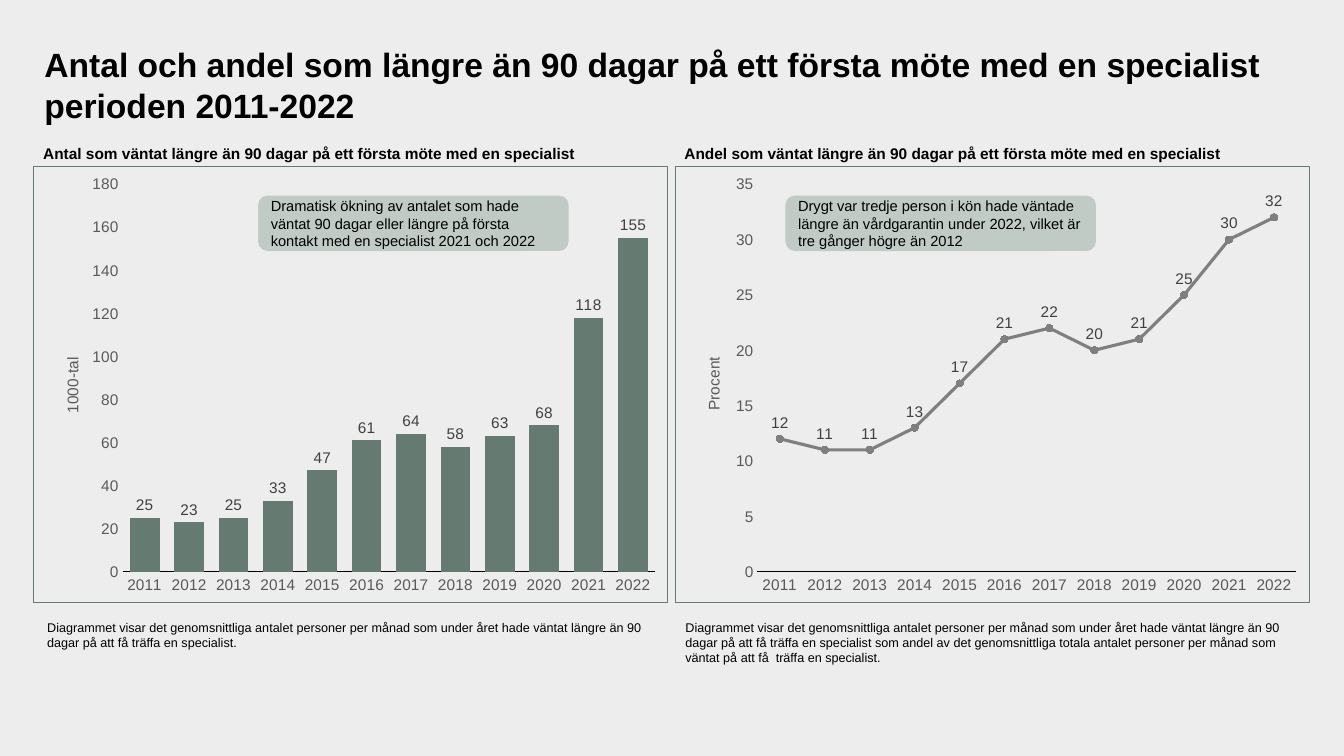
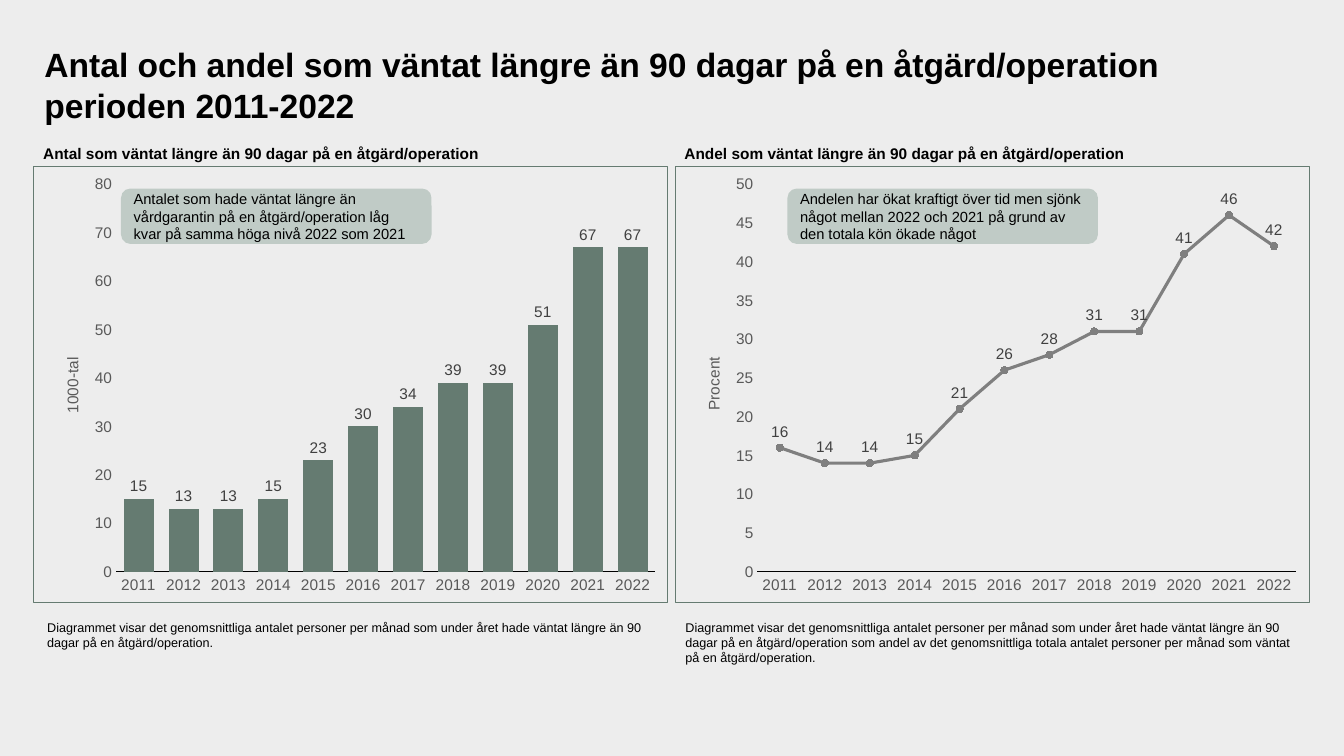
from dataclasses import dataclass

from lxml import etree
from pptx import Presentation
from pptx.chart.data import CategoryChartData
from pptx.dml.color import RGBColor
from pptx.enum import chart as charts, shapes, text
from pptx.oxml import parse_xml
from pptx.oxml.ns import nsdecls, qn
from pptx.util import Inches, Pt

FONT = "Arial"
BLACK = RGBColor(0x00, 0x00, 0x00)
BACKGROUND = RGBColor(0xED, 0xED, 0xED)
GREEN = RGBColor(0x65, 0x7B, 0x71)
PALE_GREEN = RGBColor(0xC0, 0xCB, 0xC6)
LINE_GREY = RGBColor(0x7F, 0x7F, 0x7F)
AXIS_GREY = RGBColor(0x59, 0x59, 0x59)
LABEL_GREY = RGBColor(0x40, 0x40, 0x40)

YEARS = [str(year) for year in range(2011, 2023)]
PANEL_WIDTH = 6.3
CHART_TOP, CHART_HEIGHT = 1.65, 4.33
HEADING_TOP, NOTE_TOP = 1.38, 6.1
CALLOUT_SIZE = 3.08, 0.55
CALLOUT_SHAPE = 0.2, 0.5, 0.17  # tip x, tip y, corner radius


@dataclass
class Panel:
    heading: str
    values: list
    axis_max: int
    axis_step: int
    callout: str
    callout_at: tuple  # offset from the chart's top left corner
    note: str


def set_font(font, size, color=BLACK, bold=False):
    font.name = FONT
    font.size = Pt(size)
    font.bold = bold
    font.color.rgb = color


def write(frame, words, size, bold=False, space_after=0):
    frame.word_wrap = True
    frame.text = words
    para = frame.paragraphs[0]
    para.alignment = text.PP_ALIGN.LEFT
    para.space_after = Pt(space_after)
    set_font(para.runs[0].font, size, bold=bold)


def add_text(page, left, top, height, words, size, **style):
    box = page.shapes.add_textbox(
        Inches(left), Inches(top), Inches(PANEL_WIDTH), Inches(height))
    write(box.text_frame, words, size, **style)


def add_title(page, words):
    title = page.shapes.title
    title.left, title.top = Inches(0.34), Inches(0.39)
    title.width, title.height = Inches(12.65), Inches(0.91)
    title.text_frame.auto_size = text.MSO_AUTO_SIZE.NONE
    title.text_frame.vertical_anchor = text.MSO_ANCHOR.TOP
    write(title.text_frame, words, 24, bold=True)


def set_layout(parent, before, **fractions):
    """Place a chart part by fractions of the chart's size."""
    for old in parent.findall(qn("c:layout")):
        parent.remove(old)
    layout = etree.Element(qn("c:layout"))
    manual = etree.SubElement(layout, qn("c:manualLayout"))
    if "w" in fractions:
        etree.SubElement(manual, qn("c:layoutTarget")).set("val", "inner")
    for name in ("x", "y"):
        etree.SubElement(manual, qn(f"c:{name}Mode")).set("val", "edge")
    for name, value in fractions.items():
        etree.SubElement(manual, qn(f"c:{name}")).set("val", str(value))
    parent.insert(before, layout)


def add_border(chart):
    border = parse_xml(
        f'<c:spPr {nsdecls("c", "a")}><a:noFill/><a:ln w="{Pt(0.75)}">'
        f'<a:solidFill><a:srgbClr val="{GREEN}"/></a:solidFill></a:ln></c:spPr>')
    chart.element.find(qn("c:chart")).addnext(border)


def style_axes(chart, unit, axis_max, axis_step):
    for axis in (chart.category_axis, chart.value_axis):
        axis.has_major_gridlines = False
        axis.major_tick_mark = charts.XL_TICK_MARK.NONE
        axis.minor_tick_mark = charts.XL_TICK_MARK.NONE
        set_font(axis.tick_labels.font, 11, AXIS_GREY)
    line = chart.category_axis.format.line
    line.color.rgb = BLACK
    line.width = Pt(0.75)

    axis = chart.value_axis
    axis.format.line.fill.background()
    axis.minimum_scale, axis.maximum_scale = 0, axis_max
    axis.major_unit = axis_step
    axis.tick_labels.number_format = "0"
    axis.tick_labels.number_format_is_linked = False
    frame = axis.axis_title.text_frame
    frame.text = unit
    set_font(frame.paragraphs[0].runs[0].font, 11, AXIS_GREY)
    body = axis.axis_title._element.find(".//" + qn("a:bodyPr"))
    body.set("rot", "-5400000")
    body.set("vert", "horz")
    set_layout(axis.axis_title._element, 1, x=0.04, y=0.43)


def add_chart(page, left, kind, unit, panel):
    data = CategoryChartData(number_format="0")
    data.categories = YEARS
    data.add_series("Series 1", panel.values)
    chart = page.shapes.add_chart(
        kind, Inches(left), Inches(CHART_TOP), Inches(PANEL_WIDTH),
        Inches(CHART_HEIGHT), data).chart
    chart.has_title = False
    chart.has_legend = False
    set_font(chart.font, 11)
    add_border(chart)
    style_axes(chart, unit, panel.axis_max, panel.axis_step)
    plot_left = 0.14 if panel.axis_max >= 100 else 0.13
    set_layout(chart.element.find(".//" + qn("c:plotArea")), 0,
               x=plot_left, y=0.04, w=round(0.98 - plot_left, 2), h=0.89)

    plot = chart.plots[0]
    plot.vary_by_categories = False
    series = plot.series[0]
    labels = series.data_labels
    labels.show_value = True
    set_font(labels.font, 11, LABEL_GREY)
    if kind == charts.XL_CHART_TYPE.COLUMN_CLUSTERED:
        plot.gap_width, plot.overlap = 50, -27
        series.format.fill.solid()
        series.format.fill.fore_color.rgb = GREEN
        labels.position = charts.XL_LABEL_POSITION.OUTSIDE_END
    else:
        series.smooth = False
        series.format.line.color.rgb = LINE_GREY
        series.format.line.width = Pt(2.25)
        marker = series.marker
        marker.style, marker.size = charts.XL_MARKER_STYLE.CIRCLE, 5
        marker.format.fill.solid()
        marker.format.fill.fore_color.rgb = LINE_GREY
        marker.format.line.color.rgb = LINE_GREY
        labels.position = charts.XL_LABEL_POSITION.ABOVE


def add_callout(page, left, top, words):
    width, height = CALLOUT_SIZE
    callout = page.shapes.add_shape(
        shapes.MSO_SHAPE.ROUNDED_RECTANGULAR_CALLOUT,
        Inches(left), Inches(top), Inches(width), Inches(height))
    for index, value in enumerate(CALLOUT_SHAPE):
        callout.adjustments[index] = value
    callout.shadow.inherit = False
    callout.fill.solid()
    callout.fill.fore_color.rgb = PALE_GREEN
    callout.line.fill.background()
    frame = callout.text_frame
    frame.vertical_anchor = text.MSO_ANCHOR.MIDDLE
    frame.margin_top = frame.margin_bottom = 0
    write(frame, words, 10.5)


def add_panel(page, left, note_left, note_height, kind, unit, panel):
    add_text(page, left, HEADING_TOP, 0.29, panel.heading, 11, bold=True)
    add_chart(page, left, kind, unit, panel)
    across, down = panel.callout_at
    add_callout(page, left + across, CHART_TOP + down, panel.callout)
    add_text(page, note_left, NOTE_TOP, note_height, panel.note, 9, space_after=8)


def add_comparison(deck, title, count, share):
    """Add a slide with counts as columns beside shares as a line."""
    page = deck.slides.add_slide(deck.slide_layouts[5])
    page.background.fill.solid()
    page.background.fill.fore_color.rgb = BACKGROUND
    add_title(page, title)
    add_panel(page, 0.33, 0.37, 0.4,
              charts.XL_CHART_TYPE.COLUMN_CLUSTERED, "1000-tal", count)
    add_panel(page, 6.69, 6.7, 0.56,
              charts.XL_CHART_TYPE.LINE_MARKERS, "Procent", share)


NOTE_START = ("Diagrammet visar det genomsnittliga antalet personer per månad "
              "som under året hade väntat längre än 90 dagar på ")
SHARE_NOTE = (" som andel av det genomsnittliga totala antalet personer "
              "per månad som väntat på ")

SPECIALIST_COUNT = Panel(
    "Antal som väntat längre än 90 dagar på ett första möte med en specialist",
    [25, 23, 25, 33, 47, 61, 64, 58, 63, 68, 118, 155], 180, 20,
    "Dramatisk ökning av antalet som hade väntat 90 dagar eller längre på "
    "första kontakt med en specialist 2021 och 2022",
    (2.23, 0.29),
    NOTE_START + "att få träffa en specialist.")
SPECIALIST_SHARE = Panel(
    "Andel som väntat längre än 90 dagar på ett första möte med en specialist",
    [12, 11, 11, 13, 17, 21, 22, 20, 21, 25, 30, 32], 35, 5,
    "Drygt var tredje person i kön hade väntade längre än vårdgarantin "
    "under 2022, vilket är tre gånger högre än 2012",
    (1.1, 0.29),
    NOTE_START + "att få träffa en specialist" + SHARE_NOTE
    + "att få  träffa en specialist.")
OPERATION_COUNT = Panel(
    "Antal som väntat längre än 90 dagar på en åtgärd/operation",
    [15, 13, 13, 15, 23, 30, 34, 39, 39, 51, 67, 67], 80, 10,
    "Antalet som hade väntat längre än vårdgarantin på en åtgärd/operation "
    "låg kvar på samma höga nivå 2022 som 2021",
    (0.87, 0.22),
    NOTE_START + "en åtgärd/operation.")
OPERATION_SHARE = Panel(
    "Andel som väntat längre än 90 dagar på en åtgärd/operation",
    [16, 14, 14, 15, 21, 26, 28, 31, 31, 41, 46, 42], 50, 5,
    "Andelen har ökat kraftigt över tid men sjönk något mellan 2022 och 2021 "
    "på grund av den totala kön ökade något",
    (1.12, 0.22),
    NOTE_START + "en åtgärd/operation" + SHARE_NOTE + "en åtgärd/operation.")


def main():
    deck = Presentation()
    deck.slide_width, deck.slide_height = Inches(13.33), Inches(7.5)
    add_comparison(
        deck,
        "Antal och andel som längre än 90 dagar på ett första möte med en "
        "specialist perioden 2011-2022",
        SPECIALIST_COUNT, SPECIALIST_SHARE)
    add_comparison(
        deck,
        "Antal och andel som väntat längre än 90 dagar på en åtgärd/operation "
        "perioden 2011-2022",
        OPERATION_COUNT, OPERATION_SHARE)
    deck.save("out.pptx")


if __name__ == "__main__":
    main()
